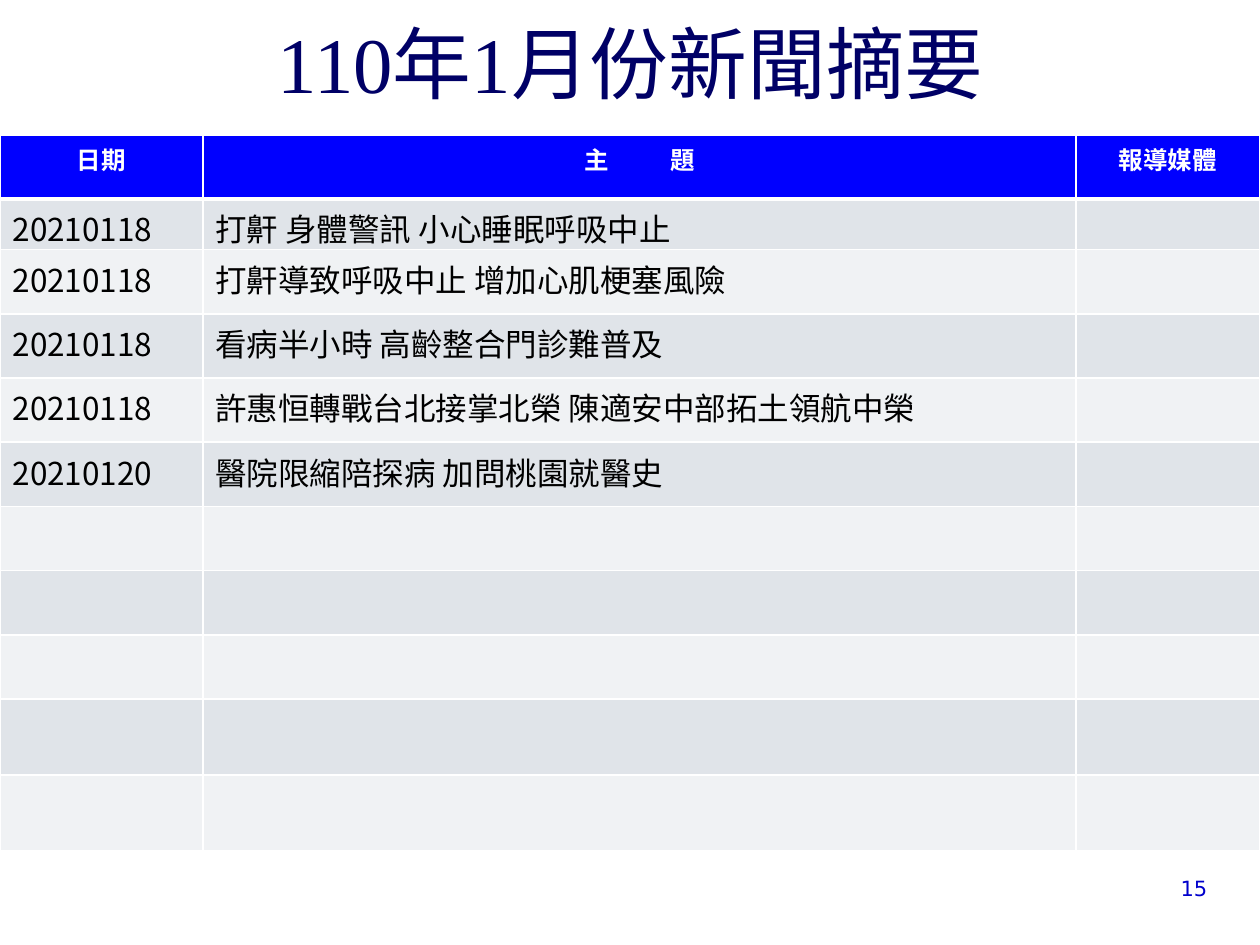
from dataclasses import dataclass

from lxml import etree
from pptx import Presentation
from pptx import util as u
from pptx.dml.color import RGBColor
from pptx.enum import text
from pptx.oxml import ns


@dataclass(frozen=True)
class Theme:
    title_font: str = "Times New Roman"
    table_font: str = "Noto Sans CJK SC"
    number_font: str = "DejaVu Sans"
    title_size: int = 45
    header_size: int = 14
    body_size: int = 18
    number_size: int = 12
    title: str = "000066"
    header_fill: str = "0000FF"
    bands: tuple = ("E0E4E9", "F0F2F4")
    white: str = "FFFFFF"
    black: str = "000000"
    number: str = "0000CC"


THEME = Theme()
COLUMN_WIDTHS = [1.61, 6.93, 1.46]
ROW_HEIGHTS = [0.51, 0.35] + [0.51] * 7 + [0.6] * 2
HEADERS = ["日期", "主 題", "報導媒體"]
NEWS = [
    ("20210118", "打鼾 身體警訊 小心睡眠呼吸中止"),
    ("20210118", "打鼾導致呼吸中止 增加心肌梗塞風險"),
    ("20210118", "看病半小時 高齡整合門診難普及"),
    ("20210118", "許惠恒轉戰台北接掌北榮 陳適安中部拓土領航中榮"),
    ("20210120", "醫院限縮陪探病 加問桃園就醫史"),
]
HEADER_GAP = 32  # extra points of spacing on the space in a header


def style_paragraph(para, font, size, color, align, bold=False):
    para.alignment = align
    para.font.name = font
    para.font.size = u.Pt(size)
    para.font.bold = bold
    para.font.color.rgb = RGBColor.from_string(color)
    # Chinese characters take the East Asian typeface
    latin = para.font._element.find(ns.qn("a:latin"))
    east_asian = etree.Element(ns.qn("a:ea"), typeface=THEME.table_font)
    latin.addnext(east_asian)


def add_text(page, wording, place, anchor, *style):
    box = page.shapes.add_textbox(*map(u.Inches, place))
    box.text_frame.word_wrap = True
    box.text_frame.vertical_anchor = anchor
    para = box.text_frame.paragraphs[0]
    para.add_run().text = wording
    style_paragraph(para, *style)


def set_borders(cell, top, bottom):
    properties = cell._tc.get_or_add_tcPr()
    for side, points in (("L", 1), ("R", 1), ("T", top), ("B", bottom)):
        line = etree.SubElement(properties, ns.qn(f"a:ln{side}"), w=str(u.Pt(points)))
        fill = etree.SubElement(line, ns.qn("a:solidFill"))
        etree.SubElement(fill, ns.qn("a:srgbClr"), val=THEME.white)


def fill_cell(cell, color):
    cell.fill.solid()
    cell.fill.fore_color.rgb = RGBColor.from_string(color)


def write_header(cell, wording):
    para = cell.text_frame.paragraphs[0]
    for part in wording.partition(" "):
        if part:
            span = para.add_run()
            span.text = part
            if part == " ":
                span.font._element.set("spc", str(HEADER_GAP * 100))
    style_paragraph(para, THEME.table_font, THEME.header_size, THEME.white,
                    text.PP_ALIGN.CENTER, True)


def write_body(cell, wording):
    para = cell.text_frame.paragraphs[0]
    para.add_run().text = wording
    style_paragraph(para, THEME.table_font, THEME.body_size, THEME.black,
                    text.PP_ALIGN.LEFT)


def add_news_table(page):
    place = (0, 1.07, sum(COLUMN_WIDTHS), sum(ROW_HEIGHTS))
    table = page.shapes.add_table(len(ROW_HEIGHTS), len(COLUMN_WIDTHS),
                                  *map(u.Inches, place)).table
    for column, width in zip(table.columns, COLUMN_WIDTHS):
        column.width = u.Inches(width)
    for index, (row, height) in enumerate(zip(table.rows, ROW_HEIGHTS)):
        row.height = u.Inches(height)
        color = THEME.bands[(index - 1) % 2] if index else THEME.header_fill
        for cell in row.cells:
            set_borders(cell, 3 if index == 1 else 1, 3 if index == 0 else 1)
            fill_cell(cell, color)

    # Wording
    for column, wording in enumerate(HEADERS):
        write_header(table.cell(0, column), wording)
    for row, item in enumerate(NEWS, start=1):
        for column, wording in enumerate(item):
            write_body(table.cell(row, column), wording)


def main():
    deck = Presentation()
    deck.slide_width, deck.slide_height = u.Inches(10), u.Inches(7.5)
    page = deck.slides.add_slide(deck.slide_layouts[6])

    # Title
    add_text(page, "110年1月份新聞摘要", (0.63, 0.34, 8.75, 0.58),
             text.MSO_ANCHOR.BOTTOM, THEME.title_font, THEME.title_size,
             THEME.title, text.PP_ALIGN.CENTER)
    # News list
    add_news_table(page)
    # Page number
    add_text(page, "15", (8.94, 6.9, 0.74, 0.3), text.MSO_ANCHOR.TOP,
             THEME.number_font, THEME.number_size, THEME.number,
             text.PP_ALIGN.RIGHT)

    deck.save("out.pptx")


if __name__ == "__main__":
    main()
